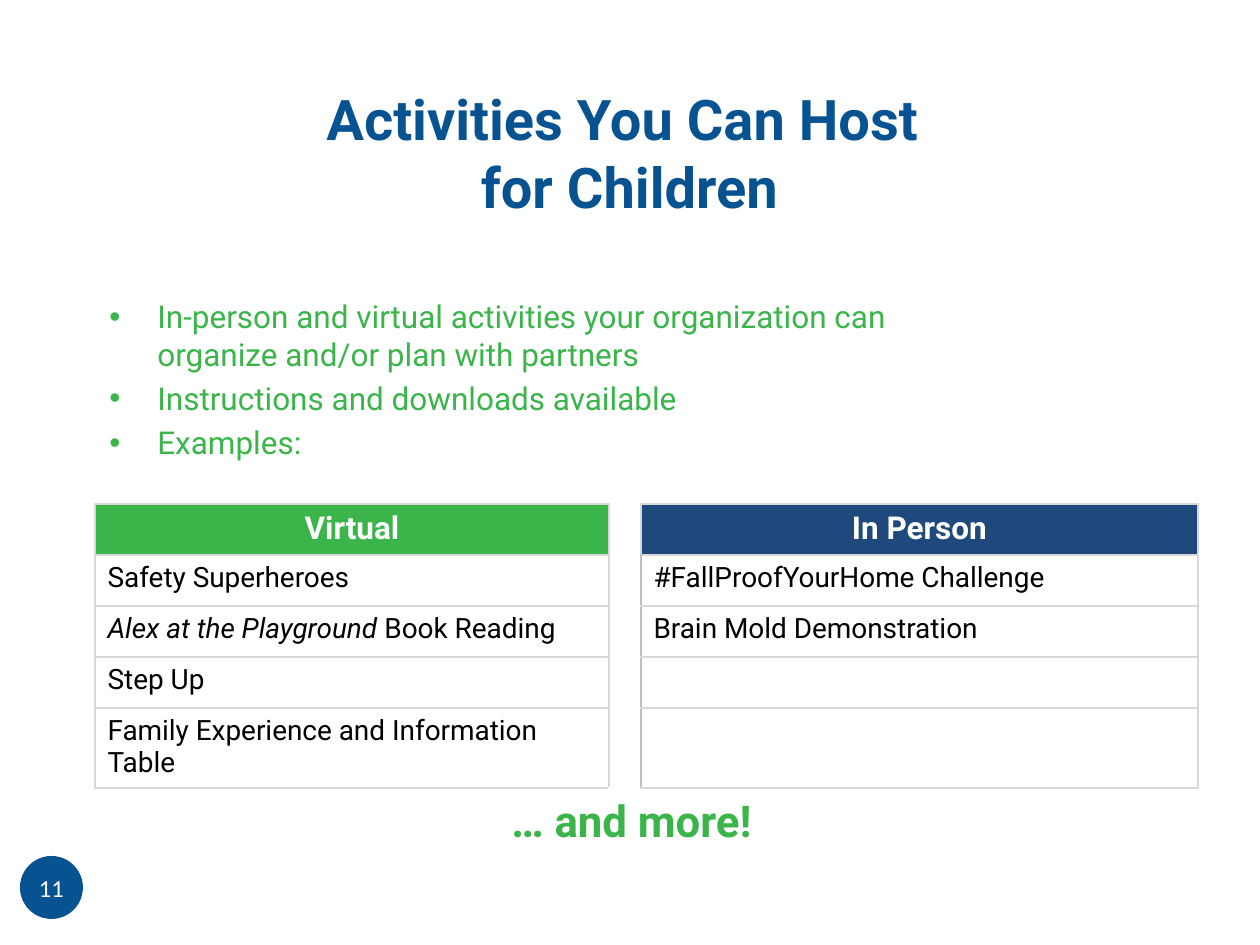
from dataclasses import dataclass

from lxml import etree
from pptx import Presentation
from pptx.dml.color import RGBColor
from pptx.enum.shapes import MSO_SHAPE
from pptx.enum.text import MSO_ANCHOR, PP_ALIGN
from pptx.oxml.ns import qn
from pptx.util import Emu, Pt

LEFT, CENTER = PP_ALIGN.LEFT, PP_ALIGN.CENTER
TOP, MIDDLE = MSO_ANCHOR.TOP, MSO_ANCHOR.MIDDLE
OVAL = MSO_SHAPE.OVAL


@dataclass(frozen=True)
class Theme:
    blue: str = "075290"
    navy: str = "1F497D"
    green: str = "3BB44A"
    white: str = "FFFFFF"
    black: str = "000000"
    grid: str = "D8D8D8"
    grid_dark: str = "BFBFBF"
    font: str = "Roboto"
    number_font: str = "Calibri"
    title: int = 32
    closing: int = 25
    body: int = 18
    cell: int = 16
    number: int = 14


T = Theme()

# Content: a paragraph is a string or a list of (text, italic) runs
TITLE = ["Activities You Can Host ", "for Children"]
BULLETS = [
    "In-person and virtual activities your organization can organize and/or plan with partners",
    "Instructions and downloads available",
    "Examples:",
]
ACTIVITIES = [
    ("Virtual", T.green, T.grid, [
        "Safety Superheroes",
        [("Alex at the Playground ", True), ("Book Reading", False)],
        "Step Up",
        "Family Experience and Information Table",
    ]),
    ("In Person", T.navy, T.grid_dark, [
        "#FallProofYourHome Challenge",
        "Brain Mold Demonstration",
        "",
        "",
    ]),
]
CLOSING = "… and more!"
PAGE_NUMBER = "11"

# Layout in px: left, top, width, height
SLIDE = (1260, 945)
TITLE_BOX = (215, 73, 829, 158)
BULLET_BOX = (97, 291, 829, 185)
TABLE_BOX = (95, 504, 1103, 284)
CLOSING_BOX = (462, 788, 339, 65)
NUMBER_BOX = (20, 856, 63, 63)
COLUMNS = (514, 32, 557)
ROWS = (51, 51, 51, 51, 80)
GAP_COLUMN = 1
BULLET_INDENT = 48


def px(n):
    return Emu(round(n * 914400 / 126))


def rgb(color):
    return RGBColor.from_string(color)


def add_bullet(p, color):
    pPr = p._p.get_or_add_pPr()
    pPr.set("marL", str(px(BULLET_INDENT)))
    pPr.set("indent", str(-px(BULLET_INDENT)))
    clr = etree.SubElement(pPr, qn("a:buClr"))
    etree.SubElement(clr, qn("a:srgbClr"), val=color)
    etree.SubElement(pPr, qn("a:buFont"), typeface="Arial")
    etree.SubElement(pPr, qn("a:buChar"), char="•")


def write(tf, paragraphs, size, color, font=T.font, bold=False, align=LEFT,
          bullet=False, before=0):
    for i, content in enumerate(paragraphs):
        p = tf.paragraphs[0] if i == 0 else tf.add_paragraph()
        p.alignment = align
        if i and before:
            p.space_before = Pt(before)
        if bullet:
            add_bullet(p, color)
        runs = [(content, False)] if isinstance(content, str) else content
        for text, italic in runs:
            r = p.add_run()
            r.text = text
            r.font.name, r.font.size = font, Pt(size)
            r.font.bold, r.font.italic = bold, italic
            r.font.color.rgb = rgb(color)


def add_text(slide, box, paragraphs, anchor=TOP, **fmt):
    tf = slide.shapes.add_textbox(*map(px, box)).text_frame
    tf.word_wrap = True
    tf.vertical_anchor = anchor
    write(tf, paragraphs, **fmt)


def set_borders(cell, left, top, right, bottom):
    tcPr = cell._tc.get_or_add_tcPr()
    for i, (side, color) in enumerate(zip("LRTB", (left, right, top, bottom))):
        ln = etree.Element(qn(f"a:ln{side}"), w=str(Pt(1)))
        fill = etree.SubElement(ln, qn("a:solidFill"))
        etree.SubElement(fill, qn("a:srgbClr"), val=color)
        tcPr.insert(i, ln)


def style_cell(cell, fill, left=T.grid, ends=T.grid):
    cell.fill.solid()
    cell.fill.fore_color.rgb = rgb(fill)
    set_borders(cell, left, ends, T.grid, ends)


def add_activities(slide):
    table = slide.shapes.add_table(len(ROWS), len(COLUMNS), *map(px, TABLE_BOX)).table
    table.first_row = table.horz_banding = False
    for column, width in zip(table.columns, COLUMNS):
        column.width = px(width)
    for row, height in zip(table.rows, ROWS):
        row.height = px(height)

    for c, (heading, color, left, items) in zip((0, 2), ACTIVITIES):
        head = table.cell(0, c)
        style_cell(head, color)
        write(head.text_frame, [heading], T.body, T.white, bold=True, align=CENTER)
        for r, item in enumerate(items, 1):
            cell = table.cell(r, c)
            style_cell(cell, T.white, left=left)
            write(cell.text_frame, [item], T.cell, T.black)

    last = len(ROWS) - 1
    table.cell(0, GAP_COLUMN).merge(table.cell(last, GAP_COLUMN))
    for r in range(len(ROWS)):
        style_cell(table.cell(r, GAP_COLUMN), T.white, ends=T.white)


def add_page_number(slide):
    sp = slide.shapes.add_shape(OVAL, *map(px, NUMBER_BOX))
    sp.shadow.inherit = False
    sp.fill.solid()
    sp.fill.fore_color.rgb = rgb(T.blue)
    sp.line.fill.background()
    tf = sp.text_frame
    tf.margin_left = tf.margin_top = tf.margin_right = tf.margin_bottom = 0
    tf.vertical_anchor = MIDDLE
    write(tf, [PAGE_NUMBER], T.number, T.white, font=T.number_font, align=CENTER)


def main():
    prs = Presentation()
    prs.slide_width, prs.slide_height = map(px, SLIDE)
    slide = prs.slides.add_slide(prs.slide_layouts[6])
    add_page_number(slide)
    add_text(slide, TITLE_BOX, TITLE, anchor=MIDDLE, size=T.title, color=T.blue,
             bold=True, align=CENTER)
    add_text(slide, BULLET_BOX, BULLETS, size=T.body, color=T.green,
             bullet=True, before=3.6)
    add_activities(slide)
    add_text(slide, CLOSING_BOX, [CLOSING], size=T.closing, color=T.green,
             bold=True, align=CENTER)
    prs.save("out.pptx")


if __name__ == "__main__":
    main()
